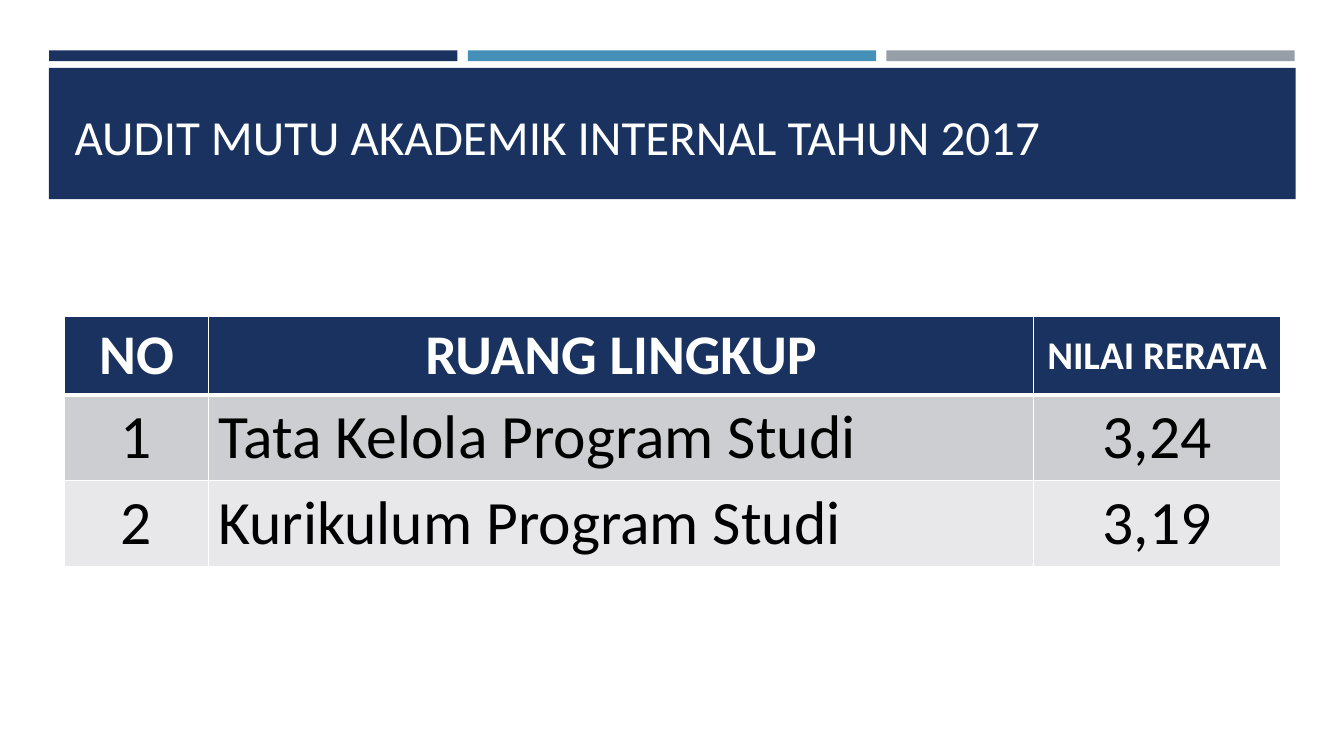
from lxml import etree
from pptx import Presentation
from pptx.dml.color import RGBColor
from pptx.enum.shapes import MSO_SHAPE
from pptx.enum.text import MSO_ANCHOR, PP_ALIGN
from pptx.oxml.ns import qn
from pptx.util import Cm, Pt

RECT = MSO_SHAPE.RECTANGLE
TOP, MIDDLE = MSO_ANCHOR.TOP, MSO_ANCHOR.MIDDLE
LEFT, CENTER = PP_ALIGN.LEFT, PP_ALIGN.CENTER
FONT = "Calibri"
COLORS = {
    "navy": "1A3260",
    "blue": "4590B8",
    "gray": "969FA7",
    "band_dark": "CDCED2",
    "band_light": "E8E8EA",
    "white": "FFFFFF",
    "black": "000000",
}
HEADERS = [("NO", 40), ("RUANG LINGKUP", 40), ("NILAI RERATA", 28)]
SCORES = [
    ("1", "Tata Kelola Program Studi", "3,24"),
    ("2", "Kurikulum Program Studi", "3,19"),
]
COLUMN_WIDTHS = [3.62, 20.8, 6.22]
HEADER_HEIGHT, ROW_HEIGHT = 1.97, 2.16


def rgb(name):
    return RGBColor.from_string(COLORS[name])


def add_bar(s, left, top, width, height, color):
    sp = s.shapes.add_shape(RECT, Cm(left), Cm(top), Cm(width), Cm(height))
    sp.shadow.inherit = False
    sp.fill.solid()
    sp.fill.fore_color.rgb = rgb(color)
    sp.line.fill.background()


def write(tf, text, size, color, bold=False, align=LEFT):
    p = tf.paragraphs[0]
    p.alignment = align
    r = p.add_run()
    r.text = text
    r.font.name = FONT
    r.font.size = Pt(size)
    r.font.bold = bold
    r.font.color.rgb = rgb(color)


def add_title(s, text):
    sp = s.shapes.add_textbox(Cm(1.63), Cm(2.01), Cm(30.63), Cm(2.82))
    tf = sp.text_frame
    tf.word_wrap = True
    tf.vertical_anchor = MIDDLE
    write(tf, text, 35, "white")


def set_borders(cell, bottom):
    """Draw white cell borders, 1 pt except for the given bottom width."""
    tcPr = cell._tc.get_or_add_tcPr()
    widths = {"a:lnL": 1, "a:lnR": 1, "a:lnT": 1, "a:lnB": bottom}
    for i, (tag, width) in enumerate(widths.items()):
        ln = etree.Element(qn(tag), w=str(Pt(width)))
        fill = etree.SubElement(ln, qn("a:solidFill"))
        etree.SubElement(fill, qn("a:srgbClr"), val=COLORS["white"])
        tcPr.insert(i, ln)


def fill_cell(cell, text, size, color, fill, bold=False, align=CENTER,
              anchor=TOP, bottom=1):
    cell.fill.solid()
    cell.fill.fore_color.rgb = rgb(fill)
    cell.vertical_anchor = anchor
    write(cell.text_frame, text, size, color, bold, align)
    set_borders(cell, bottom)


def add_score_table(s):
    heights = [HEADER_HEIGHT] + [ROW_HEIGHT] * len(SCORES)
    table = s.shapes.add_table(
        len(heights), len(HEADERS), Cm(1.63), Cm(7.98),
        Cm(sum(COLUMN_WIDTHS)), Cm(sum(heights))).table
    for column, width in zip(table.columns, COLUMN_WIDTHS):
        column.width = Cm(width)
    for row, height in zip(table.rows, heights):
        row.height = Cm(height)
    for j, (text, size) in enumerate(HEADERS):
        fill_cell(table.cell(0, j), text, size, "white", "navy",
                  bold=True, anchor=MIDDLE, bottom=3)
    for i, score in enumerate(SCORES, 1):
        band = "band_dark" if i % 2 else "band_light"
        for j, text in enumerate(score):
            fill_cell(table.cell(i, j), text, 44, "black", band,
                      align=LEFT if j == 1 else CENTER)


def main():
    prs = Presentation()
    prs.slide_width, prs.slide_height = Cm(33.87), Cm(19.05)
    s = prs.slides.add_slide(prs.slide_layouts[6])
    for i, color in enumerate(["navy", "blue", "gray"]):
        add_bar(s, 1.24 + i * 10.55, 1.27, 10.29, 0.27, color)
    add_bar(s, 1.23, 1.71, 31.42, 3.31, "navy")
    add_title(s, "AUDIT MUTU AKADEMIK INTERNAL TAHUN 2017")
    add_score_table(s)
    prs.save("out.pptx")


if __name__ == "__main__":
    main()
